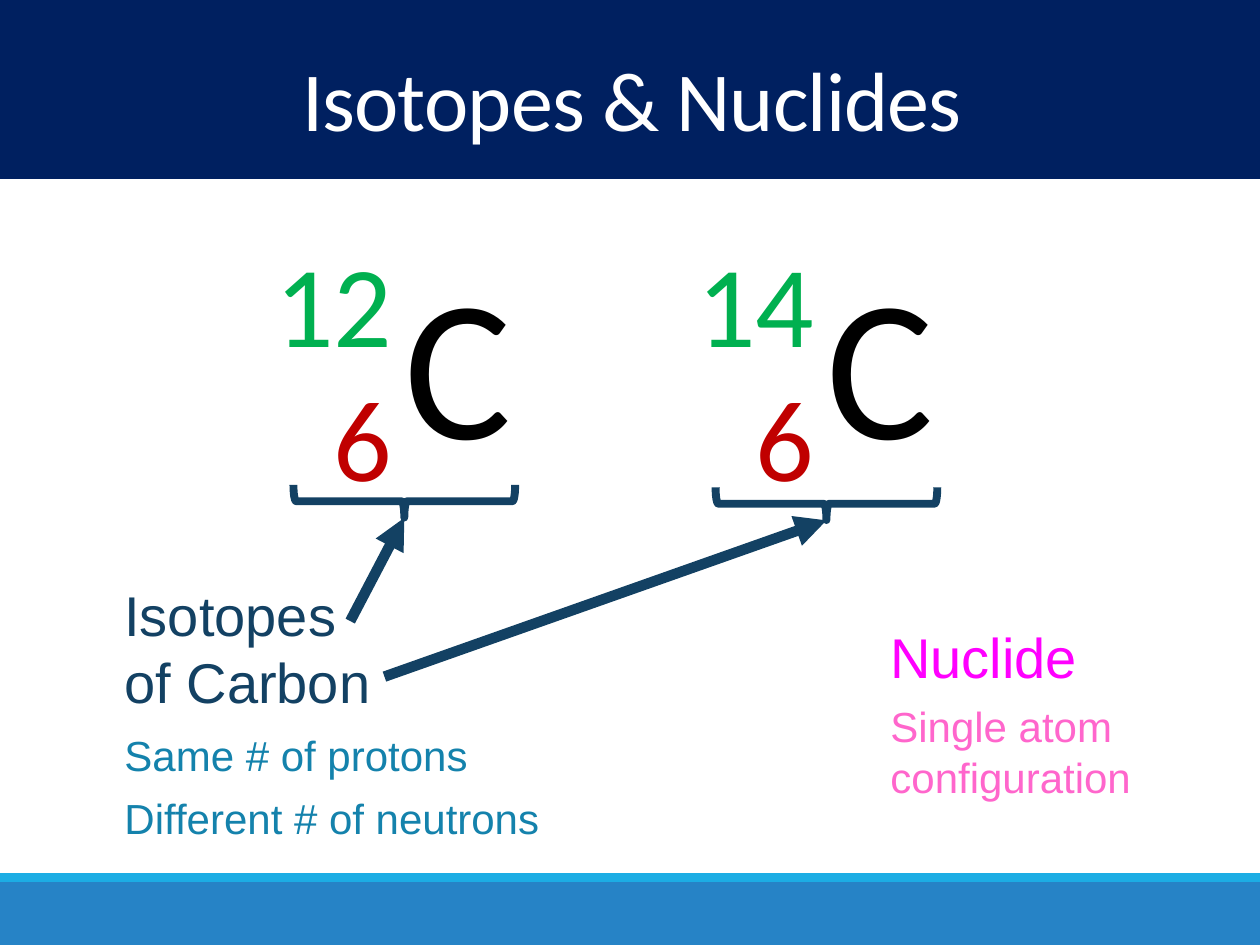
from lxml import etree
from pptx import Presentation
from pptx.dml.color import RGBColor
from pptx.enum.shapes import MSO_CONNECTOR as Connector, MSO_SHAPE as Shape
from pptx.enum.text import MSO_ANCHOR as Anchor, MSO_AUTO_SIZE as AutoSize, PP_ALIGN as Align
from pptx.oxml.ns import qn
from pptx.util import Cm, Pt

SLIDE_WIDTH, SLIDE_HEIGHT = 25.4, 19.05
NAVY, STEEL, TEAL = "002060", "134163", "1482AC"


def color(hex_value):
    return RGBColor.from_string(hex_value)


def add_band(slide, top, height, fill):
    """Draw a full-width band."""
    band = slide.shapes.add_shape(Shape.RECTANGLE, 0, Cm(top), Cm(SLIDE_WIDTH), Cm(height))
    band.shadow.inherit = False
    band.fill.solid()
    band.fill.fore_color.rgb = color(fill)
    band.line.fill.background()


def add_text(slide, text, left, top, width, height, *, size, ink, font="Arial",
             align=Align.LEFT, wrap=True, grow=True, anchor=Anchor.TOP,
             line_spacing=None, tracking=None):
    """Add one paragraph; tracking is in hundredths of a point."""
    box = slide.shapes.add_textbox(Cm(left), Cm(top), Cm(width), Cm(height))
    frame = box.text_frame
    frame.word_wrap = wrap
    frame.auto_size = AutoSize.SHAPE_TO_FIT_TEXT if grow else AutoSize.NONE
    frame.vertical_anchor = anchor
    paragraph = frame.paragraphs[0]
    paragraph.alignment = align
    if line_spacing:
        paragraph.line_spacing = line_spacing
    run = paragraph.add_run()
    run.text = text
    run.font.name = font
    run.font.size = Pt(size)
    run.font.color.rgb = color(ink)
    if tracking:
        run.font._element.set("spc", str(tracking))


def add_nuclide_symbol(slide, mass_number, offset):
    symbol = {"font": "Calibri", "wrap": False}
    add_text(slide, "C", 7.9 + offset, 4.67, 2.69, 5.18, size=115, ink="000000", **symbol)
    add_text(slide, mass_number, 5.26 + offset, 4.55, 2.9, 3.07, size=66, ink="00B050",
             align=Align.RIGHT, **symbol)
    add_text(slide, "6", 6.45 + offset, 7.26, 1.7, 3.07, size=66, ink="C00000",
             align=Align.RIGHT, **symbol)


def add_brace(slide, left, top):
    """Draw a brace lying under a symbol, its point facing down."""
    brace = slide.shapes.add_shape(Shape.RIGHT_BRACE, Cm(left), Cm(top), Cm(0.66), Cm(4.47))
    brace.rotation = 90
    brace.shadow.inherit = False
    brace.fill.background()
    brace.line.color.rgb = color(STEEL)
    brace.line.width = Pt(4.5)


def add_arrow(slide, start, end):
    arrow = slide.shapes.add_connector(Connector.STRAIGHT, *map(Cm, start + end))
    arrow.line.color.rgb = color(STEEL)
    arrow.line.width = Pt(6)
    etree.SubElement(arrow.line._get_or_add_ln(), qn("a:tailEnd"), type="triangle")
    etree.SubElement(arrow._element.spPr, qn("a:effectLst"))


def main():
    prs = Presentation()
    prs.slide_width, prs.slide_height = Cm(SLIDE_WIDTH), Cm(SLIDE_HEIGHT)
    slide = prs.slides.add_slide(prs.slide_layouts[6])

    add_band(slide, 17.78, 1.27, "2683C6")
    add_band(slide, 17.6, 0.18, "1CADE4")
    add_band(slide, 0, 3.61, NAVY)
    add_text(slide, "Isotopes & Nuclides", 0.08, 1.07, 25.32, 2.13, size=48, ink="FFFFFF",
             font="Calibri", align=Align.CENTER, grow=False, anchor=Anchor.MIDDLE,
             line_spacing=0.85, tracking=-50)

    for mass_number, offset in (("12", 0), ("14", 8.51)):
        add_nuclide_symbol(slide, mass_number, offset)

    add_text(slide, "Same # of protons", 2.26, 14.58, 7.7, 1.27, size=24, ink=TEAL)
    add_text(slide, "Different # of neutrons", 2.26, 15.85, 9.73, 1.27, size=24, ink=TEAL)
    add_text(slide, "Nuclide", 17.7, 12.42, 5.64, 1.63, size=32, ink="FF00FF")
    add_text(slide, "Single atom configuration", 17.7, 14, 7.7, 2.31, size=24, ink="FF66CC")

    add_brace(slide, 7.82, 7.87)
    add_brace(slide, 16.33, 7.92)
    add_text(slide, "Isotopes of Carbon", 2.26, 11.58, 5.64, 3, size=32, ink=STEEL)
    add_arrow(slide, (7.75, 13.64), (16.66, 10.49))
    add_arrow(slide, (7.06, 12.52), (8.15, 10.44))

    prs.save("out.pptx")


if __name__ == "__main__":
    main()
